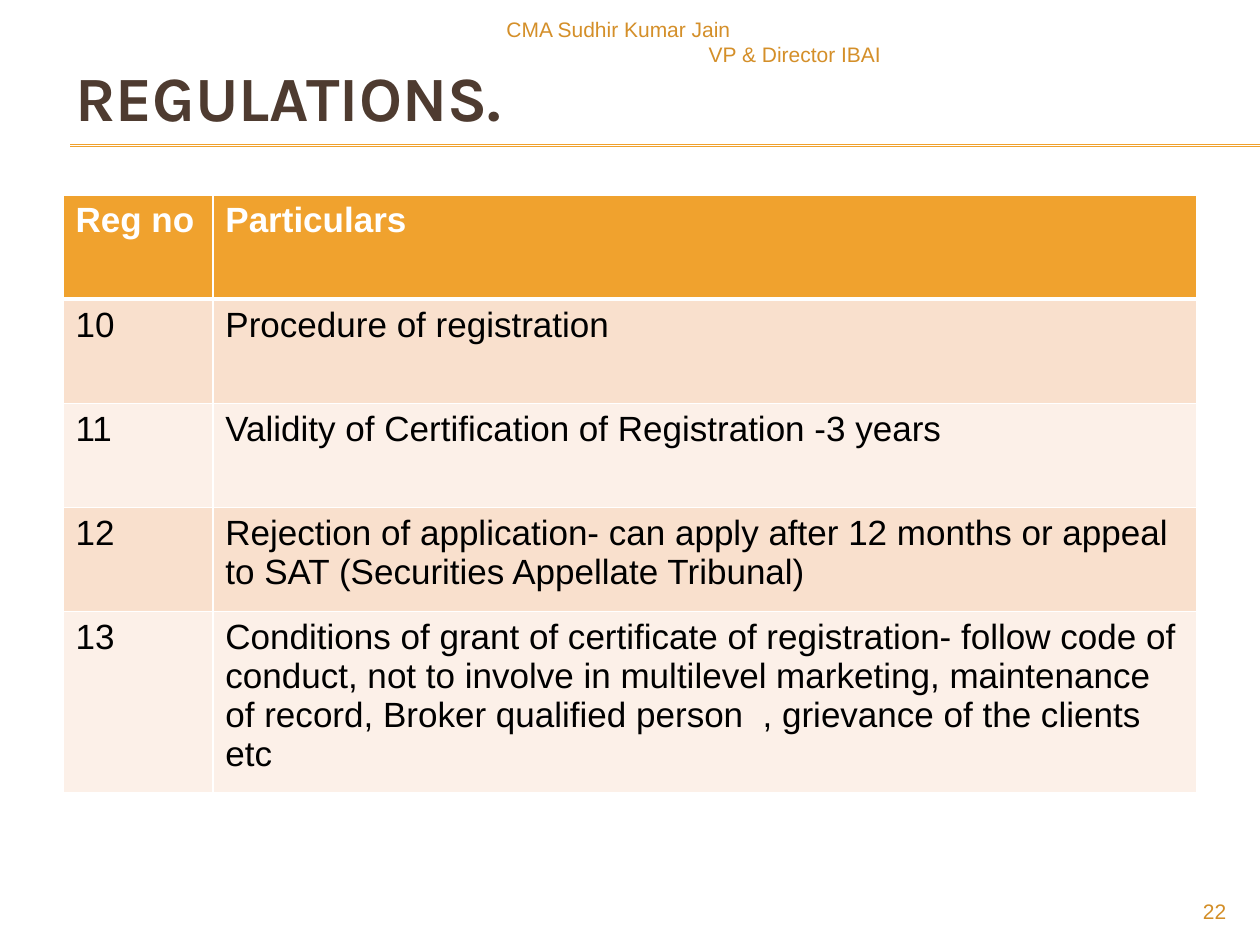
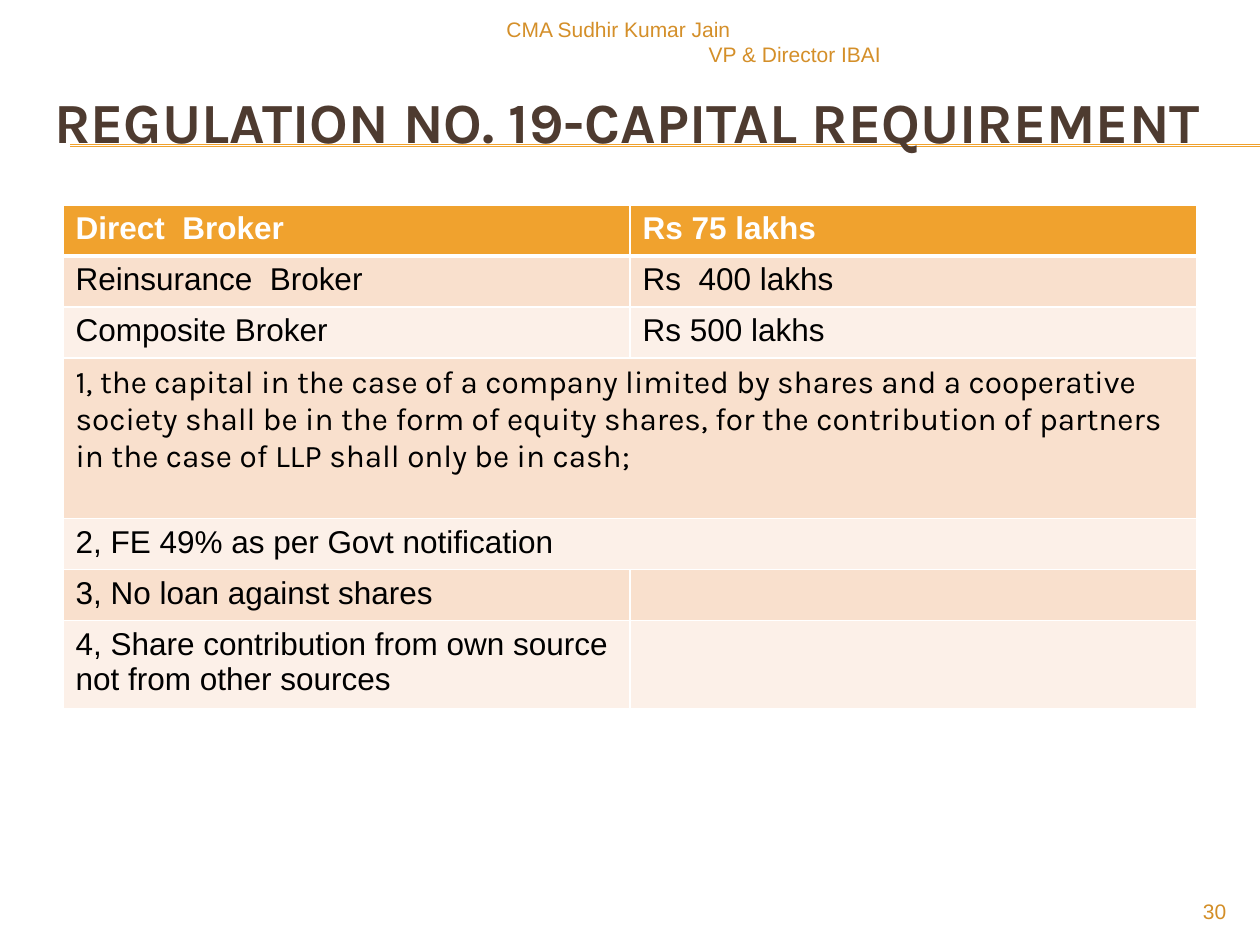
from dataclasses import dataclass

from lxml.etree import SubElement
from pptx import Presentation
from pptx.dml.color import RGBColor
from pptx.enum.shapes import MSO_CONNECTOR as Connector
from pptx.enum.text import MSO_ANCHOR as Anchor, PP_ALIGN as Align
from pptx.oxml.ns import qn
from pptx.slide import Slide
from pptx.table import _Cell as Cell
from pptx.text.text import TextFrame, _Paragraph as Paragraph
from pptx.util import Cm, Pt

BODY_FONT = "Arial"
TITLE_FONT = "Karla"
ORANGE = "F0A22E"
BROWN = "4E3B30"
BLACK = "000000"
WHITE = "FFFFFF"
AUTHOR_COLOR = "D48F29"
NUMBER_COLOR = "D38E27"
BANDS = ("F9E0CD", "FCF0E8")
AUTHOR_LINES = (("CMA Sudhir Kumar Jain", Align.LEFT), ("VP & Director IBAI", Align.RIGHT))


@dataclass(frozen=True)
class Area:
    left: float
    top: float
    width: float
    height: float

    def lengths(self) -> list[Cm]:
        return [Cm(value) for value in (self.left, self.top, self.width, self.height)]


@dataclass(frozen=True)
class Style:
    size: float
    color: str
    font: str = BODY_FONT
    bold: bool = False


@dataclass(frozen=True)
class Row:
    texts: tuple[str, ...]
    height: float
    font: str = BODY_FONT


@dataclass(frozen=True)
class RegulationPage:
    title: str
    title_area: Area
    title_size: float
    table_top: float
    column_widths: tuple[float, ...]
    text_size: float
    rows: tuple[Row, ...]
    number: int


AUTHOR_AREA = Area(9.96, 0.2, 8.05, 0.81)
NUMBER_AREA = Area(22.86, 17.98, 2.11, 0.69)
TABLE_LEFT = 1.27
RULE_LEFT, RULE_RIGHT = 1.42, 25.4
RULE_TOPS = (2.92, 2.95)

PAGES = (
    RegulationPage(
        title="REGULATIONS.",
        title_area=Area(1.27, 0.76, 22.86, 2.36),
        title_size=36,
        table_top=3.93,
        column_widths=(3.02, 19.84),
        text_size=20,
        rows=(
            Row(("Reg no", "Particulars"), 2.1),
            Row(("10", "Procedure of registration"), 2.1),
            Row(("11", "Validity of Certification of Registration -3 years"), 2.1),
            Row(("12", "Rejection of application- can apply after 12 months or appeal "
                 "to SAT (Securities Appellate Tribunal)"), 2.1),
            Row(("13", "Conditions of grant of certificate of registration- follow code of "
                 "conduct, not to involve in multilevel marketing, maintenance of record, "
                 "Broker qualified person  , grievance of the clients etc"), 2.8),
        ),
        number=22,
    ),
    RegulationPage(
        title="REGULATION NO. 19-CAPITAL REQUIREMENT",
        title_area=Area(0.84, 1.27, 24.13, 2.34),
        title_size=32.4,
        table_top=4.13,
        column_widths=(11.43, 11.43),
        text_size=18,
        rows=(
            Row(("Direct  Broker", "Rs 75 lakhs"), 1.03),
            Row(("Reinsurance  Broker", "Rs  400 lakhs"), 1.03),
            Row(("Composite Broker", "Rs 500 lakhs"), 1.03),
            Row(("1, the capital in the case of a company limited by shares and a "
                 "cooperative society shall be in the form of equity shares, for the "
                 "contribution of partners in the case of LLP shall only be in cash;",),
                3.23, TITLE_FONT),
            Row(("2, FE 49% as per Govt notification",), 1.03),
            Row(("3, No loan against shares", ""), 1.03),
            Row(("4, Share contribution from own source not from other sources", ""), 1.67),
        ),
        number=30,
    ),
)


def rgb(color: str) -> RGBColor:
    return RGBColor.from_string(color)


def format_para(para: Paragraph, style: Style) -> None:
    para.font.size = Pt(style.size)
    for span in para.runs:
        span.font.name = style.font
        span.font.size = Pt(style.size)
        span.font.bold = style.bold
        span.font.color.rgb = rgb(style.color)


def add_box(page: Slide, area: Area, text: str, style: Style,
            align: Align = Align.LEFT, anchor: Anchor = Anchor.TOP) -> TextFrame:
    frame = page.shapes.add_textbox(*area.lengths()).text_frame
    frame.word_wrap = True
    frame.vertical_anchor = anchor
    frame.text = text
    for para in frame.paragraphs:
        para.alignment = align
        format_para(para, style)
    return frame


def add_rules(page: Slide) -> None:
    for top in RULE_TOPS:
        rule = page.shapes.add_connector(
            Connector.STRAIGHT, Cm(RULE_LEFT), Cm(top), Cm(RULE_RIGHT), Cm(top))
        rule.line.color.rgb = rgb(ORANGE)
        rule.line.width = Pt(0.75)
        SubElement(rule._element.spPr, qn("a:effectLst"))


def set_borders(cell: Cell, bottom: float, top: float) -> None:
    properties = cell._tc.get_or_add_tcPr()
    widths = {"a:lnL": 1, "a:lnR": 1, "a:lnT": top, "a:lnB": bottom}
    for tag, width in widths.items():
        line = SubElement(properties, qn(tag), w=str(Pt(width)))
        fill = SubElement(line, qn("a:solidFill"))
        SubElement(fill, qn("a:srgbClr"), val=WHITE)


def add_table(page: Slide, content: RegulationPage) -> None:
    rows, widths = content.rows, content.column_widths
    area = Area(TABLE_LEFT, content.table_top, sum(widths), sum(row.height for row in rows))
    table = page.shapes.add_table(len(rows), len(widths), *area.lengths()).table
    for column, width in zip(table.columns, widths):
        column.width = Cm(width)
    for index, row in enumerate(rows):
        table.rows[index].height = Cm(row.height)
        header = index == 0
        style = Style(content.text_size, WHITE if header else BLACK, row.font, header)
        for cell in table.rows[index].cells:
            set_borders(cell, bottom=3 if header else 1, top=3 if index == 1 else 1)
            cell.fill.solid()
            cell.fill.fore_color.rgb = rgb(ORANGE if header else BANDS[(index - 1) % 2])
        if len(row.texts) < len(widths):
            table.cell(index, 0).merge(table.cell(index, len(widths) - 1))
        for column, text in enumerate(row.texts):
            frame = table.cell(index, column).text_frame
            frame.text = text
            format_para(frame.paragraphs[0], style)


def add_page(deck: Presentation, content: RegulationPage) -> None:
    page = deck.slides.add_slide(deck.slide_layouts[6])
    add_rules(page)
    add_box(page, content.title_area, content.title,
            Style(content.title_size, BROWN, TITLE_FONT, True), anchor=Anchor.MIDDLE)
    add_table(page, content)
    author = add_box(page, AUTHOR_AREA, "\n".join(text for text, _ in AUTHOR_LINES),
                     Style(12, AUTHOR_COLOR))
    for para, (_, align) in zip(author.paragraphs, AUTHOR_LINES):
        para.alignment = align
    add_box(page, NUMBER_AREA, str(content.number), Style(12, NUMBER_COLOR), Align.RIGHT)


def main() -> None:
    deck = Presentation()
    deck.slide_width, deck.slide_height = Cm(25.4), Cm(19.05)
    for content in PAGES:
        add_page(deck, content)
    deck.save("out.pptx")


if __name__ == "__main__":
    main()
